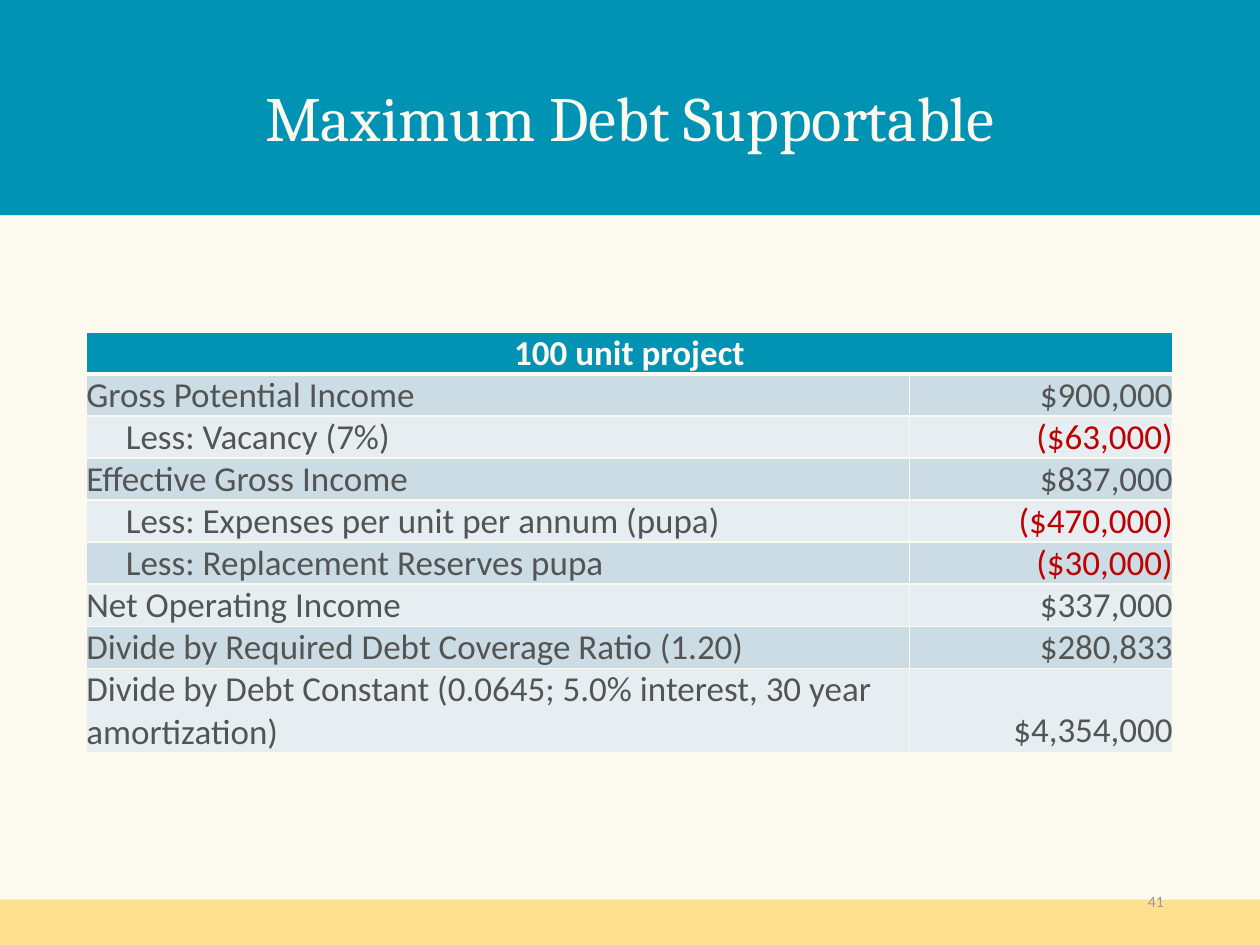
"""Build the Maximum Debt Supportable slide."""
import lxml.etree
import pptx
import pptx.util
import pptx.dml.color
import pptx.enum.shapes
import pptx.enum.text
import pptx.oxml.ns

Pt = pptx.util.Pt
RGB = pptx.dml.color.RGBColor
ALIGN = pptx.enum.text.PP_ALIGN
ANCHOR = pptx.enum.text.MSO_ANCHOR
qn = pptx.oxml.ns.qn

CREAM = RGB(0xFC, 0xF9, 0xEF)
TEAL = RGB(0x01, 0x93, 0xB4)
HEAD = RGB(0x01, 0x93, 0xB3)
YELLOW = RGB(0xFD, 0xE1, 0x8F)
DARK = RGB(0xCC, 0xDC, 0xE5)
LIGHT = RGB(0xE7, 0xEE, 0xF2)
INK = RGB(0x53, 0x55, 0x54)
RED = RGB(0xC0, 0x00, 0x00)
GREY = RGB(0x99, 0x99, 0x99)


def write(frame, text, align, size, face, color, bold=False):
    frame.text = text
    para = frame.paragraphs[0]
    para.alignment = align
    font = para.runs[0].font
    font.size, font.name, font.bold = Pt(size), face, bold
    font.color.rgb = color
    return para


def style(cell, fill, top, bottom):
    props = cell._tc.get_or_add_tcPr()
    for side, width in (("L", 1), ("R", 1), ("T", top), ("B", bottom)):
        line = lxml.etree.SubElement(props, qn("a:ln" + side), w=str(Pt(width)))
        solid = lxml.etree.SubElement(line, qn("a:solidFill"))
        lxml.etree.SubElement(solid, qn("a:srgbClr"), val=str(CREAM))
    cell.fill.solid()
    cell.fill.fore_color.rgb = fill
    cell.margin_left = cell.margin_right = cell.margin_top = cell.margin_bottom = 0
    cell.vertical_anchor = ANCHOR.BOTTOM


deck = pptx.Presentation()
deck.slide_width, deck.slide_height = Pt(720), Pt(540)
slide = deck.slides.add_slide(deck.slide_layouts[6])
slide.background.fill.solid()
slide.background.fill.fore_color.rgb = CREAM

for top, height, color in ((514.1, 25.9, YELLOW), (0, 123, TEAL)):
    band = slide.shapes.add_shape(
        pptx.enum.shapes.MSO_SHAPE.RECTANGLE, 0, Pt(top), Pt(720), Pt(height))
    band.shadow.inherit = False
    band.fill.solid()
    band.fill.fore_color.rgb = color
    band.line.fill.background()

labels = (
    ((90, 31, 540, 60.5), ANCHOR.BOTTOM, 0.9,
     ("Maximum Debt Supportable", ALIGN.CENTER, 36, "Cambria", CREAM)),
    ((508.5, 500.5, 162, 28.75), ANCHOR.MIDDLE, 1,
     ("41", ALIGN.RIGHT, 9, "Calibri", GREY)),
)
for place, anchor, space, words in labels:
    frame = slide.shapes.add_textbox(*map(Pt, place)).text_frame
    frame.word_wrap = True
    frame.vertical_anchor = anchor
    frame.margin_left = frame.margin_right = Pt(5.4)
    frame.margin_top = frame.margin_bottom = Pt(2.7)
    write(frame, *words).line_spacing = space

rows = (
    ("Gross Potential Income", "$900,000"),
    ("Less: Vacancy (7%)", "($63,000)"),
    ("Effective Gross Income", "$837,000"),
    ("Less: Expenses per unit per annum (pupa)", "($470,000)"),
    ("Less: Replacement Reserves pupa", "($30,000)"),
    ("Net Operating Income", "$337,000"),
    ("Divide by Required Debt Coverage Ratio (1.20)", "$280,833"),
    ("Divide by Debt Constant (0.0645; 5.0% interest, 30 year amortization)",
     "$4,354,000"),
)
count = len(rows) + 1
table = slide.shapes.add_table(
    count, 2, Pt(49.3), Pt(189.6), Pt(621), Pt(21.6 * count)).table
table.columns[0].width, table.columns[1].width = Pt(470.4), Pt(150.6)
for cell in table.rows[0].cells:
    style(cell, HEAD, 1, 3)
title = table.cell(0, 0)
title.merge(table.cell(0, 1))
write(title.text_frame, "100 unit project", ALIGN.CENTER, 20, "Calibri", CREAM, True)

for num, (name, value) in enumerate(rows, 1):
    left, right = table.rows[num].cells
    for cell in (left, right):
        style(cell, DARK if num % 2 else LIGHT, 3 if num == 1 else 1, 1)
    if name.startswith("Less"):
        left.margin_left = Pt(22.6)
    write(left.text_frame, name, ALIGN.LEFT, 20, "Calibri", INK)
    tint = RED if value.startswith("(") else INK
    write(right.text_frame, value, ALIGN.RIGHT, 20, "Calibri", tint)

deck.save("out.pptx")
